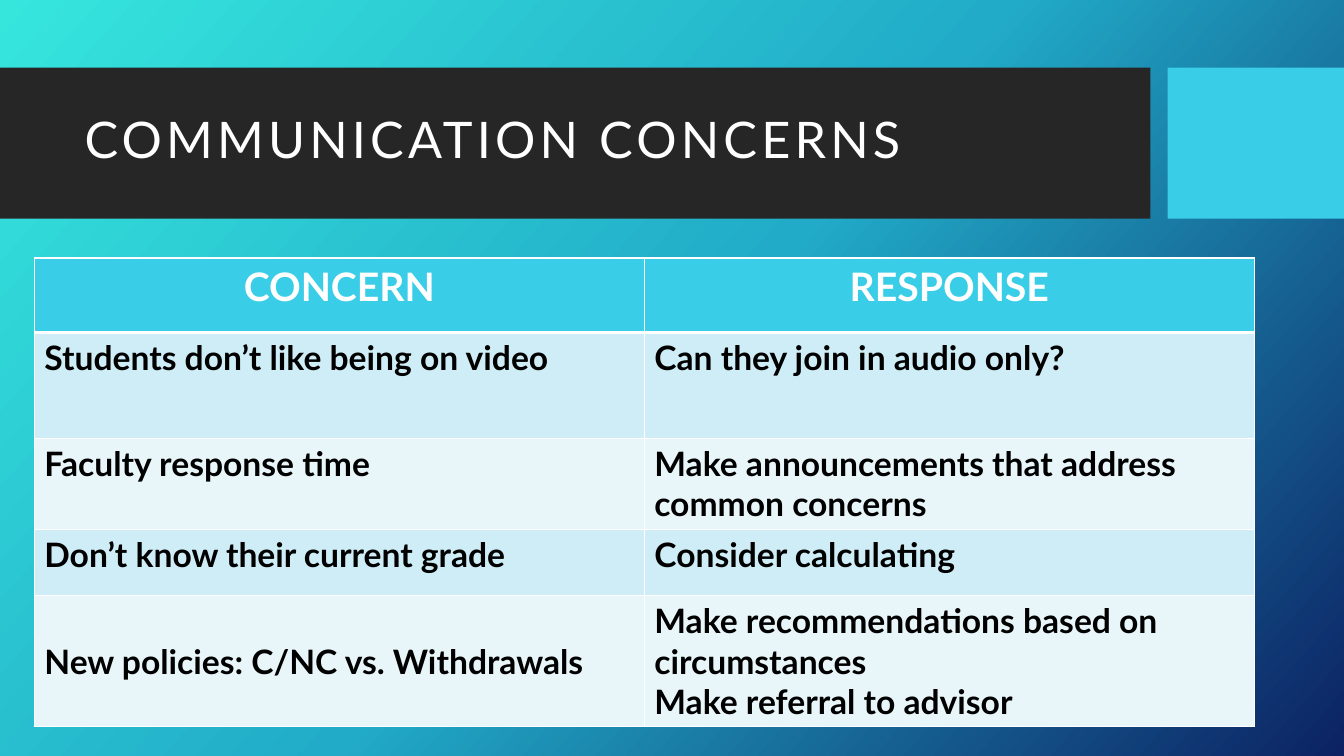
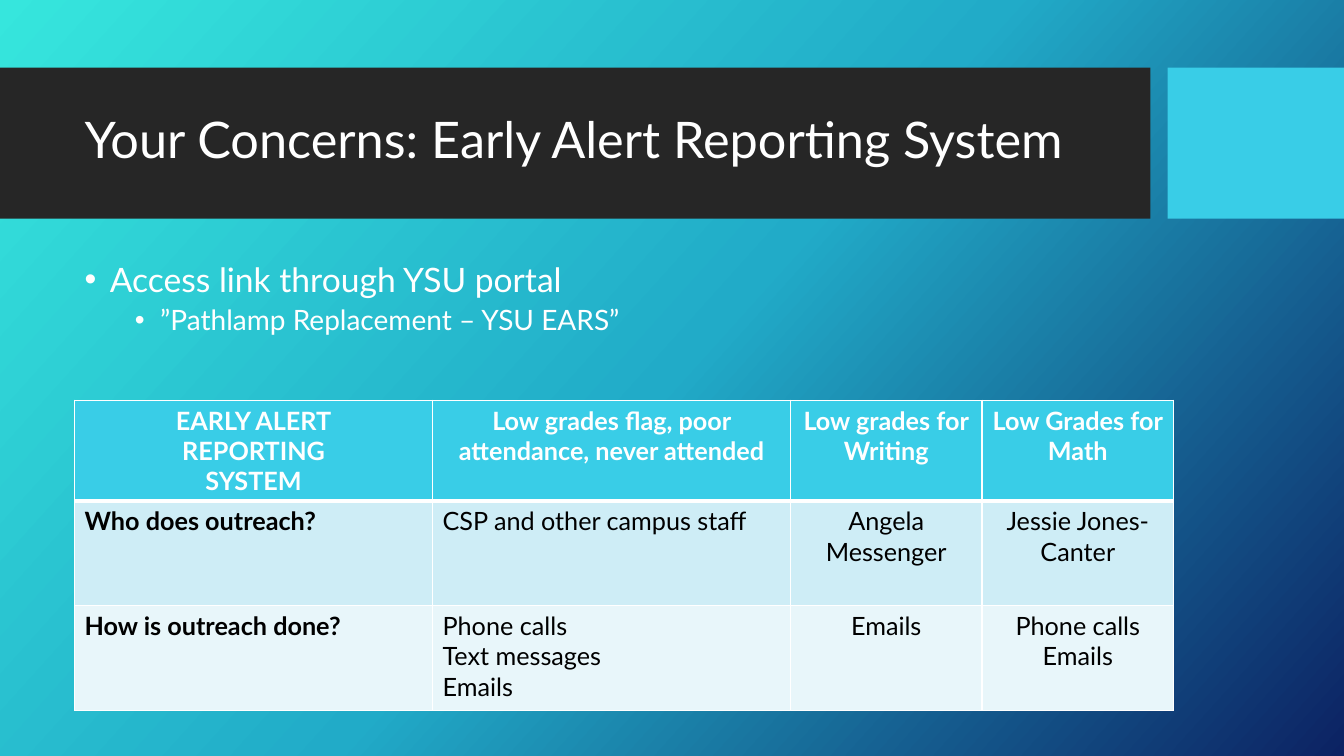
from copy import deepcopy
from lxml import etree
from pptx import Presentation
from pptx.dml.color import RGBColor
from pptx.enum import shapes, text
from pptx.oxml import ns
from pptx.util import Inches, Pt

FONT = "Lato"
WHITE = RGBColor(0xFF, 0xFF, 0xFF)
BLACK = RGBColor(0, 0, 0)
CHARCOAL = RGBColor(0x26, 0x26, 0x26)
CYAN = RGBColor(0x39, 0xCD, 0xE7)
BANDS = [RGBColor(0xE8, 0xF6, 0xFA), RGBColor(0xCE, 0xED, 0xF6)]
GRADIENT = [
    (0, RGBColor(0x36, 0xE6, 0xDD)),
    (0.5, RGBColor(0x21, 0xAB, 0xC8)),
    (1, RGBColor(0x0C, 0x22, 0x63)),
]
CENTER, LEFT = text.PP_ALIGN.CENTER, text.PP_ALIGN.LEFT
MIDDLE, TOP = text.MSO_ANCHOR.MIDDLE, text.MSO_ANCHOR.TOP


def write(tf, lines, size, color, bold=False, align=LEFT):
    fmt = {"name": FONT, "size": Pt(size), "bold": bold}
    for i, line in enumerate(lines):
        p = tf.paragraphs[0] if i == 0 else tf.add_paragraph()
        p.alignment = align
        r = p.add_run()
        r.text = line
        for key, value in fmt.items():
            setattr(r.font, key, value)
        r.font.color.rgb = color


def add_grid(s, left, top, cols, rows, data, sizes, bold_cols, center_cols):
    frame = s.shapes.add_table(len(rows), len(cols), Inches(left), Inches(top),
                               Inches(sum(cols)), Inches(sum(rows)))
    table = frame.table
    table.first_row = table.horz_banding = False
    for column, width in zip(table.columns, cols):
        column.width = Inches(width)
    for y, (row, height) in enumerate(zip(table.rows, rows)):
        row.height = Inches(height)
        head = y == 0
        edges = {"lnL": 1, "lnR": 1, "lnT": 3 if y == 1 else 1, "lnB": 3 if head else 1}
        for x, cell in enumerate(row.cells):
            cell.fill.solid()
            cell.fill.fore_color.rgb = CYAN if head else BANDS[y % 2]
            write(cell.text_frame, data[y][x].split("\n"), sizes[0 if head else 1],
                  WHITE if head else BLACK, head or x in bold_cols,
                  CENTER if head or x in center_cols else LEFT)
            tcPr = cell._tc.get_or_add_tcPr()
            for i, (tag, width) in enumerate(edges.items()):
                ln = etree.Element(ns.qn("a:" + tag), w=str(Pt(width)))
                fill = etree.SubElement(ln, ns.qn("a:solidFill"))
                etree.SubElement(fill, ns.qn("a:srgbClr"), val=str(WHITE))
                tcPr.insert(i, ln)
    return table


prs = Presentation()
prs.slide_width, prs.slide_height = Inches(13.33), Inches(7.5)

master = prs.slide_master
bg = master.background.fill
bg.gradient()
bg.gradient_angle = 318
gs_lst = master._element.xpath("./p:cSld/p:bg//a:gsLst")[0]
gs_lst.insert(1, deepcopy(gs_lst[0]))
for stop, (position, color) in zip(bg.gradient_stops, GRADIENT):
    stop.position = position
    stop.color.rgb = color

slides = []
for title, spacing in [("COMMUNICATION CONCERNS", 3),
                       ("Your Concerns: Early Alert Reporting System", 0)]:
    s = prs.slides.add_slide(prs.slide_layouts[6])
    for left, width, color in [(0, 11.41, CHARCOAL), (11.58, 1.75, CYAN)]:
        sp = s.shapes.add_shape(shapes.MSO_SHAPE.RECTANGLE, Inches(left), Inches(0.67),
                                Inches(width), Inches(1.5))
        sp.shadow.inherit = False
        sp.fill.solid()
        sp.fill.fore_color.rgb = color
        sp.line.fill.background()
    tf = s.shapes.add_textbox(Inches(0.74), Inches(0.82), Inches(10.51), Inches(1.18)).text_frame
    tf.word_wrap = True
    tf.vertical_anchor = MIDDLE
    write(tf, [title], 36, WHITE)
    p = tf.paragraphs[0]
    p.line_spacing = 0.9
    if spacing:
        p.runs[0].font._element.set("spc", str(spacing * 100))
    slides.append(s)

concerns = [
    ["CONCERN", "RESPONSE"],
    ["Students don’t like being on video", "Can they join in audio only?"],
    ["Faculty response time", "Make announcements that address common concerns"],
    ["Don’t know their current grade", "Consider calculating"],
    ["New policies: C/NC vs. Withdrawals",
     "Make recommendations based on circumstances\nMake referral to advisor"],
]
table = add_grid(slides[0], 0.34, 2.56, [6.05] * 2, [0.74, 1.05, 0.9, 0.66, 1.3],
                 concerns, (28, 24), {0, 1}, set())
table.cell(4, 0).vertical_anchor = MIDDLE

s = slides[1]
tf = s.shapes.add_textbox(Inches(0.74), Inches(2.56), Inches(10.51), Inches(1.1)).text_frame
tf.word_wrap = True
tf.vertical_anchor = TOP
write(tf, ["Access link through YSU portal", "”Pathlamp Replacement – YSU EARS”"], 24, WHITE)
for level, (p, margin, size, before) in enumerate(zip(tf.paragraphs, (0.25, 0.75), (24, 20), (0, 5))):
    p.level = level
    p.line_spacing = 0.9
    p.space_before = Pt(before)
    p.runs[0].font.size = Pt(size)
    pPr = p._p.get_or_add_pPr()
    pPr.set("marL", str(Inches(margin)))
    pPr.set("indent", str(Inches(-0.25)))
    etree.SubElement(pPr, ns.qn("a:buFont"), typeface="Arial")
    etree.SubElement(pPr, ns.qn("a:buChar"), char="•")

outreach = [
    ["EARLY ALERT\nREPORTING\nSYSTEM", "Low grades flag, poor attendance, never attended",
     "Low grades for\nWriting", "Low Grades for\nMath"],
    ["Who does outreach?", "CSP and other campus staff", "Angela Messenger", "Jessie Jones-Canter"],
    ["How is outreach done?", "Phone calls\nText messages\nEmails", "Emails", "Phone calls\nEmails"],
]
add_grid(s, 0.74, 3.97, [3.55, 3.55, 1.9, 1.9], [0.99, 1.04, 1.04],
         outreach, (18, 18), {0}, {2, 3})

prs.save("out.pptx")
